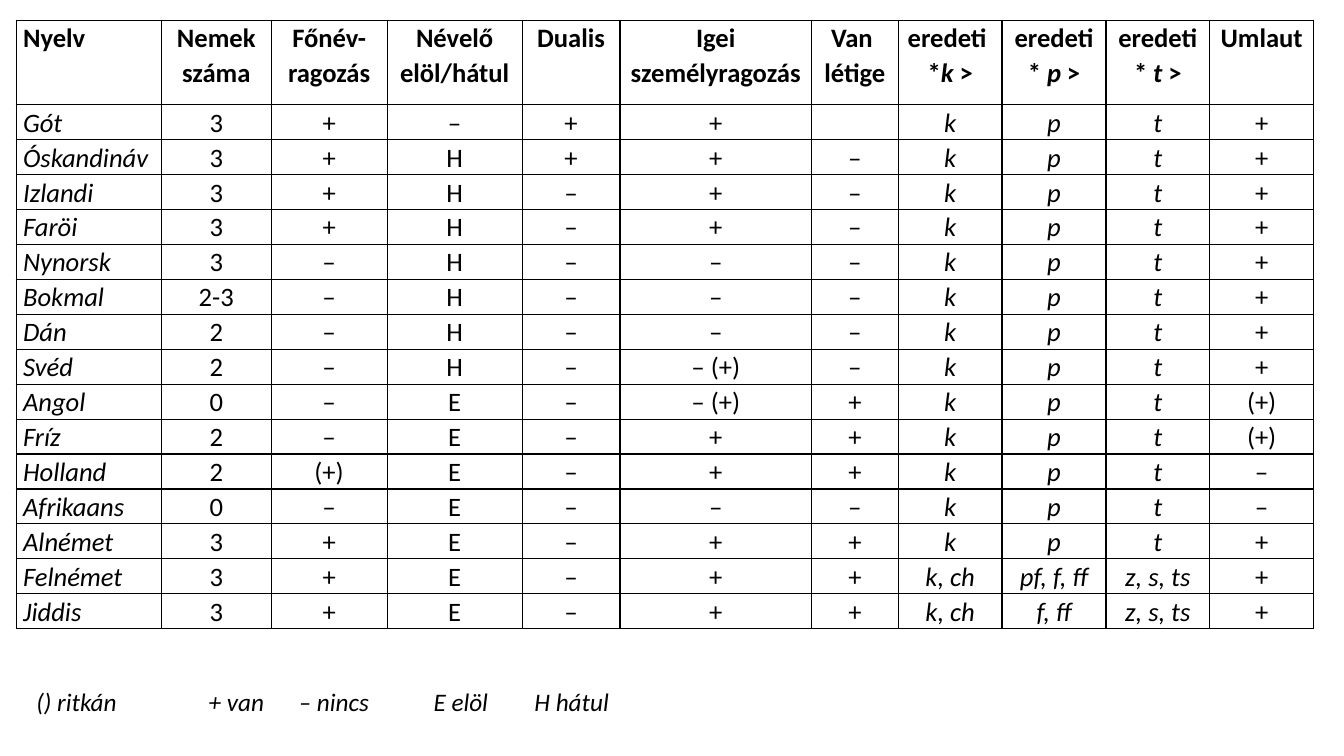
import pptx
import pptx.util
import pptx.dml.color
import pptx.enum.text
import pptx.oxml
import lxml.etree
from pptx.oxml import ns

HEADERS = [
    ("Nyelv",), ("Nemek száma",), ("Főnév-ragozás",), ("Névelő\nelöl/hátul",),
    ("Dualis",), ("Igei személyragozás",), ("Van \vlétige",),
    ("eredeti \v*", "k", " >"), ("eredeti\v* ", "p", " >"),
    ("eredeti\v* ", "t", " >"), ("Umlaut",),
]
LANGUAGES = [
    "Gót|3|+|‒|+|+||k|p|t|+",
    "Óskandináv|3|+|H|+|+|‒|k|p|t|+",
    "Izlandi|3|+|H|‒|+|‒|k|p|t|+",
    "Faröi|3|+|H|‒|+|‒|k|p|t|+",
    "Nynorsk|3|‒|H|‒|‒|‒|k|p|t|+",
    "Bokmal|2-3|‒|H|‒|‒|‒|k|p|t|+",
    "Dán|2|‒|H|‒|‒|‒|k|p|t|+",
    "Svéd|2|‒|H|‒|‒ (+)|‒|k|p|t|+",
    "Angol|0|‒|E|‒|‒ (+)|+|k|p|t|(+)",
    "Fríz|2|‒|E|‒|+|+|k|p|t|(+)",
    "Holland|2|(+)|E|‒|+|+|k|p|t|‒",
    "Afrikaans|0|‒|E|‒|‒|‒|k|p|t|‒",
    "Alnémet|3|+|E|‒|+|+|k|p|t|+",
    "Felnémet|3|+|E|‒|+|+|k, ch|pf, f, ff|z, s, ts|+",
    "Jiddis|3|+|E|‒|+|+|k, ch|f, ff|z, s, ts|+",
]
LEGEND = ["() ritkán", "+ van", "‒ nincs", "E elöl", "H hátul"]
LEGEND_TABS = [1.71, 2.6, 3.94, 4.94]
COLUMN_WIDTHS = [1.44, 1.09, 1.15, 1.34, 0.97, 1.9, 0.86] + [1.03] * 4
ITALIC_COLUMNS = {0, 7, 8, 9}
TABLE_HEIGHT, HEADER_HEIGHT = 6.04, 0.84
THEME = {"font": "Calibri", "ink": "000000", "table": 19, "legend": 18, "border": 1}

Inches, Pt = pptx.util.Inches, pptx.util.Pt
ALIGN = pptx.enum.text.PP_ALIGN


def format_run(r, size, bold=False, italic=False):
    r.font.name = THEME["font"]
    r.font.size = Pt(size)
    r.font.bold = bold
    r.font.italic = italic
    r.font.color.rgb = pptx.dml.color.RGBColor.from_string(THEME["ink"])


def add_borders(cell):
    tc_pr = cell._tc.get_or_add_tcPr()
    for side in ("lnL", "lnR", "lnT", "lnB"):
        ln = lxml.etree.SubElement(tc_pr, ns.qn("a:" + side), w=str(Pt(THEME["border"])))
        fill = lxml.etree.SubElement(ln, ns.qn("a:solidFill"))
        lxml.etree.SubElement(fill, ns.qn("a:srgbClr"), val=THEME["ink"])


def fill_cell(cell, parts, centred, bold, italic):
    cell.margin_left = cell.margin_right = Inches(0.07)
    cell.margin_top = cell.margin_bottom = 0
    add_borders(cell)
    cell.fill.background()
    tf = cell.text_frame
    tf.text = parts[0]
    for part in parts[1:]:
        tf.paragraphs[-1].add_run().text = part
    for p in tf.paragraphs:
        p.alignment = ALIGN.CENTER if centred else ALIGN.LEFT
        p.line_spacing = 1.07
        for r in p.runs:
            format_run(r, THEME["table"], bold, italic or r.text in parts[1:2])


def add_language_table(s):
    rows = [[(text,) for text in line.split("|")] for line in LANGUAGES]
    table = s.shapes.add_table(
        len(rows) + 1, len(HEADERS), Inches(0.16), Inches(0.2),
        Inches(sum(COLUMN_WIDTHS)), Inches(TABLE_HEIGHT)).table
    table.first_row = table.horz_banding = False
    for column, width in zip(table.columns, COLUMN_WIDTHS):
        column.width = Inches(width)
    for row in table.rows:
        row.height = Inches((TABLE_HEIGHT - HEADER_HEIGHT) / len(rows))
    table.rows[0].height = Inches(HEADER_HEIGHT)
    for i, row in enumerate([HEADERS] + rows):
        for j, parts in enumerate(row):
            fill_cell(table.cell(i, j), parts, j > 0, i == 0, i > 0 and j in ITALIC_COLUMNS)


def add_legend(s):
    sp = s.shapes.add_textbox(Inches(0.2), Inches(6.61), Inches(9.08), Inches(0.51))
    tf = sp.text_frame
    tf.word_wrap = True
    tf.margin_left = Inches(0.16)
    tf.text = "\t".join(LEGEND)
    p = tf.paragraphs[0]
    p.line_spacing = 1.5
    tabs = lxml.etree.SubElement(p._p.get_or_add_pPr(), ns.qn("a:tabLst"))
    for position in LEGEND_TABS:
        lxml.etree.SubElement(tabs, ns.qn("a:tab"), pos=str(Inches(position)), algn="l")
    for r in p.runs:
        format_run(r, THEME["legend"], italic=True)


def main():
    prs = pptx.Presentation()
    prs.slide_width, prs.slide_height = Inches(13.33), Inches(7.5)
    s = prs.slides.add_slide(prs.slide_layouts[6])
    add_language_table(s)
    add_legend(s)
    prs.save("out.pptx")


if __name__ == "__main__":
    main()
